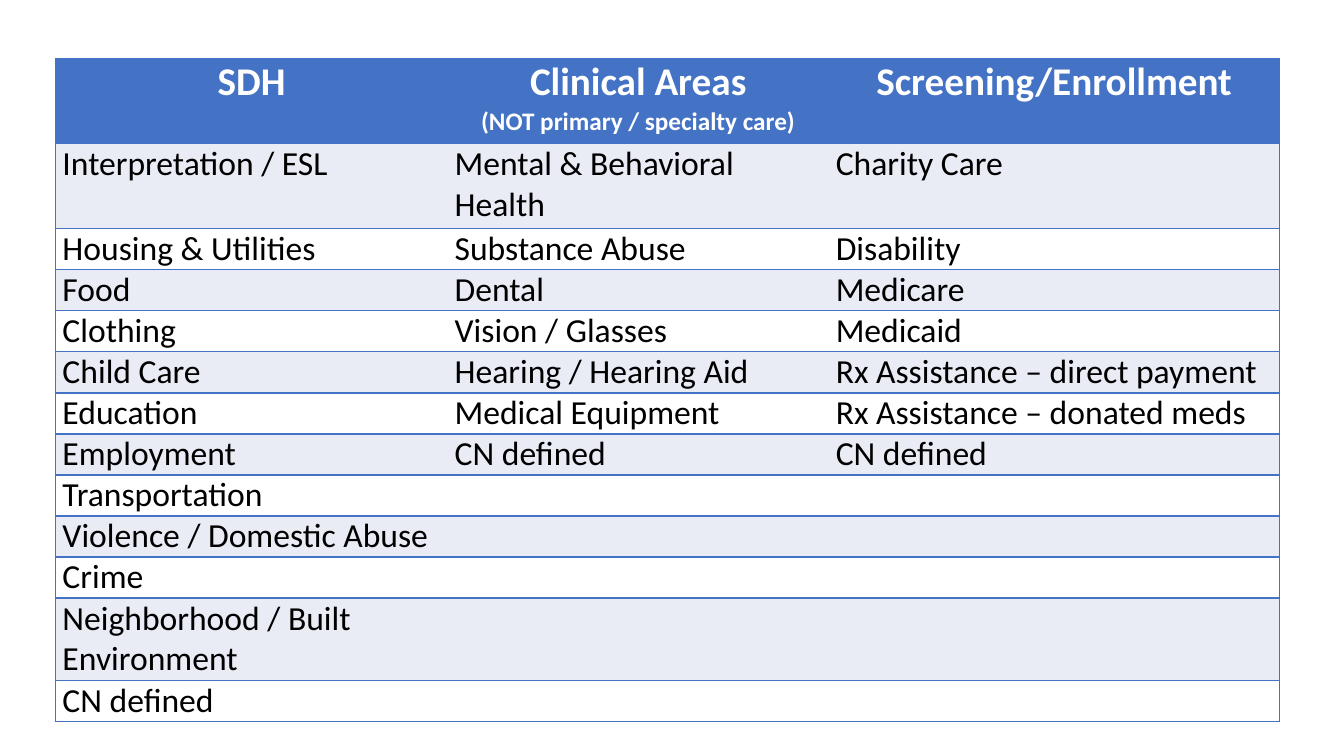
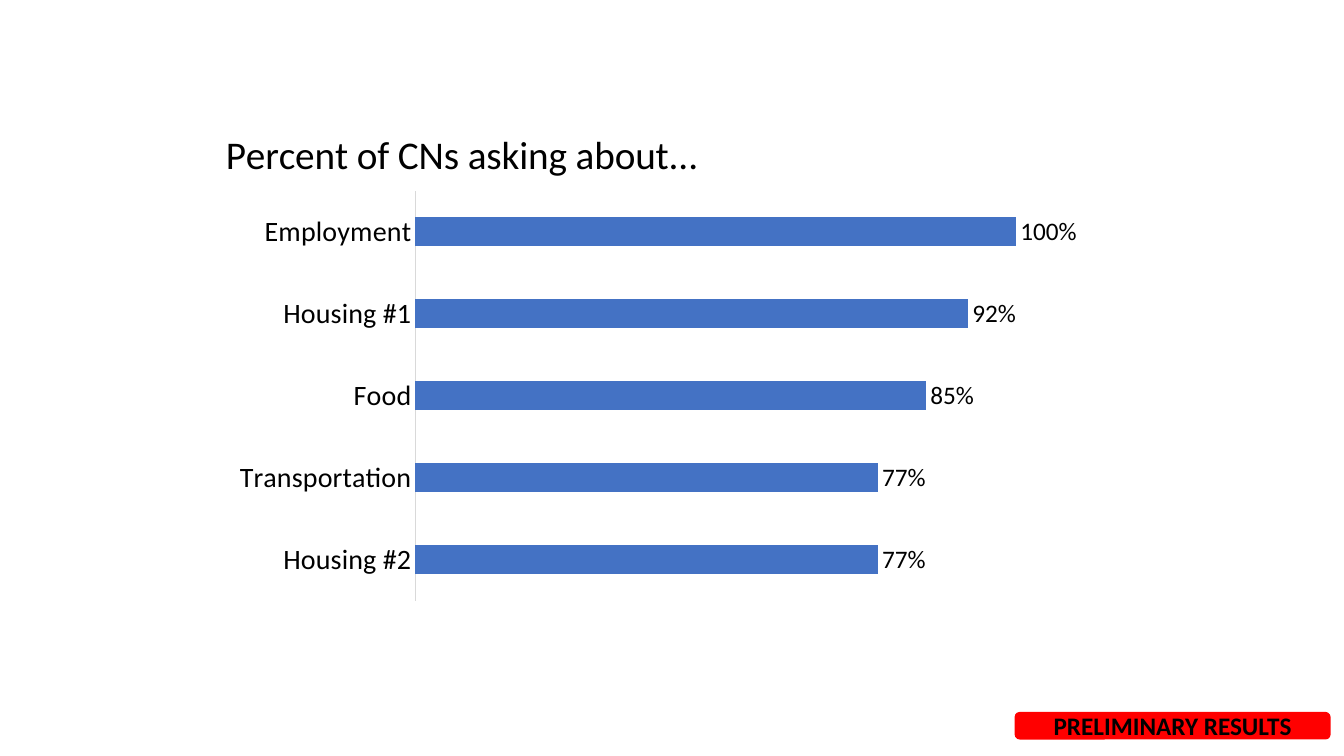
from dataclasses import dataclass
from itertools import zip_longest

from pptx import Presentation
from pptx.chart.data import CategoryChartData
from pptx.dml.color import RGBColor as RGB
from pptx.enum.chart import XL_CHART_TYPE as ChartType, XL_LABEL_POSITION as LabelPos, XL_TICK_MARK as Tick
from pptx.enum.shapes import MSO_SHAPE as Shape
from pptx.enum.text import MSO_ANCHOR as Anchor, PP_ALIGN as Align
from pptx.oxml import parse_xml
from pptx.oxml.ns import nsdecls, qn
from pptx.util import Inches, Pt


@dataclass(frozen=True)
class Theme:
    font: str = "Calibri"
    blue: str = "4472C4"
    band: str = "E9EBF5"
    white: str = "FFFFFF"
    black: str = "000000"
    red: str = "FF0000"
    axis: str = "D9D9D9"
    heading: int = 28
    body: int = 24
    category: int = 20
    small: int = 18


T = Theme()


def style(font, size, color, bold=False):
    font.name = T.font
    font.size = Pt(size)
    font.bold = bold
    font.color.rgb = RGB.from_string(color)


def set_layout(parent, index, **values):
    for old in parent.findall(qn("c:layout")):
        parent.remove(old)
    modes = {"x": "edge", "y": "edge"}
    tags = "".join(f'<c:{k}Mode val="{m}"/>' for k, m in modes.items())
    tags += "".join(f'<c:{k} val="{v}"/>' for k, v in values.items())
    target = '<c:layoutTarget val="inner"/>' if "w" in values else ""
    parent.insert(index, parse_xml(
        f'<c:layout {nsdecls("c")}><c:manualLayout>{target}{tags}</c:manualLayout></c:layout>'))


prs = Presentation()
prs.slide_width, prs.slide_height = Inches(13.33), Inches(7.5)
blank = prs.slide_layouts[6]

columns = [
    (3.89, ["SDH"],
     ["Interpretation / ESL", "Housing & Utilities", "Food", "Clothing", "Child Care", "Education",
      "Employment", "Transportation", "Violence / Domestic Abuse", "Crime",
      "Neighborhood / Built Environment", "CN defined"]),
    (3.78, ["Clinical Areas", "(NOT primary / specialty care)"],
     ["Mental & Behavioral Health", "Substance Abuse", "Dental", "Vision / Glasses",
      "Hearing / Hearing Aid", "Medical Equipment", "CN defined"]),
    (4.47, ["Screening/Enrollment"],
     ["Charity Care", "Disability", "Medicare", "Medicaid", "Rx Assistance – direct payment",
      "Rx Assistance – donated meds", "CN defined"]),
]
widths, headings, topics = zip(*columns)
rows = [headings] + [[[t] if t else [] for t in row] for row in zip_longest(*topics)]
heights = [0.84, 0.85] + [0.37] * (len(rows) - 2)

s = prs.slides.add_slide(blank)
table = s.shapes.add_table(len(rows), len(widths), Inches(0.55), Inches(0.58),
                           Inches(sum(widths)), Inches(sum(heights))).table
for col, width in zip(table.columns, widths):
    col.width = Inches(width)
for i, (row, height) in enumerate(zip(rows, heights)):
    table.rows[i].height = Inches(height)
    for j, lines in enumerate(row):
        cell = table.cell(i, j)
        cell.margin_left = cell.margin_right = Inches(0.07)
        cell.margin_top = cell.margin_bottom = 0
        drawn = {"L": j == 0, "R": j == len(widths) - 1, "T": True, "B": True}
        for side, shown in drawn.items():
            fill = f'<a:solidFill><a:srgbClr val="{T.blue}"/></a:solidFill>' if shown else "<a:noFill/>"
            cell._tc.get_or_add_tcPr().append(parse_xml(
                f'<a:ln{side} {nsdecls("a")} w="{Pt(1)}">{fill}</a:ln{side}>'))
        cell.fill.solid()
        cell.fill.fore_color.rgb = RGB.from_string(T.blue if i == 0 else T.band if i % 2 else T.white)
        tf = cell.text_frame
        for n, line in enumerate(lines):
            p = tf.add_paragraph() if n else tf.paragraphs[0]
            r = p.add_run()
            r.text = line
            if i == 0:
                p.alignment = Align.CENTER
                style(r.font, T.small if n else T.heading, T.white, True)
            else:
                style(r.font, T.body, T.black)

s = prs.slides.add_slide(blank)
data = CategoryChartData(number_format="0%")
data.categories = ["Housing #2", "Transportation", "Food", "Housing #1", "Employment"]
data.add_series("Series 1", [0.77, 0.77, 0.85, 0.92, 1])
chart = s.shapes.add_chart(ChartType.BAR_CLUSTERED, Inches(2.17), Inches(1.1),
                           Inches(9.29), Inches(4.96), data).chart
style(chart.font, T.small, T.black)
chart.has_legend = False
chart.has_title = True
r = chart.chart_title.text_frame.paragraphs[0].add_run()
r.text = "Percent of CNs asking about..."
style(r.font, T.heading, T.black)
set_layout(chart.chart_title._element, 1, x=0, y=0.02)
set_layout(chart._chartSpace.chart.plotArea, 0, x=0.21, y=0.16, w=0.77, h=0.82)

axis = chart.category_axis
axis.major_tick_mark = axis.minor_tick_mark = Tick.NONE
axis.format.line.color.rgb = RGB.from_string(T.axis)
axis.format.line.width = Pt(0.75)
style(axis.tick_labels.font, T.category, T.black)

axis = chart.value_axis
axis.visible = False
axis.has_major_gridlines = False
axis.minimum_scale, axis.maximum_scale = 0, 1.2

plot = chart.plots[0]
plot.gap_width = 182
plot.vary_by_categories = False
fill = plot.series[0].format.fill
fill.solid()
fill.fore_color.rgb = RGB.from_string(T.blue)
plot.has_data_labels = True
labels = plot.data_labels
labels.show_value = True
labels.number_format = "0%"
labels.number_format_is_linked = False
labels.position = LabelPos.OUTSIDE_END
style(labels.font, T.small, T.black)

sp = s.shapes.add_shape(Shape.ROUNDED_RECTANGLE, Inches(10.07), Inches(7.07), Inches(3.12), Inches(0.26))
sp.shadow.inherit = False
sp.fill.solid()
sp.fill.fore_color.rgb = sp.line.color.rgb = RGB.from_string(T.red)
sp.line.width = Pt(1)
tf = sp.text_frame
tf.word_wrap = True
tf.vertical_anchor = Anchor.MIDDLE
p = tf.paragraphs[0]
p.alignment = Align.CENTER
r = p.add_run()
r.text = "PRELIMINARY RESULTS"
style(r.font, T.small, T.black, True)

prs.save("out.pptx")
